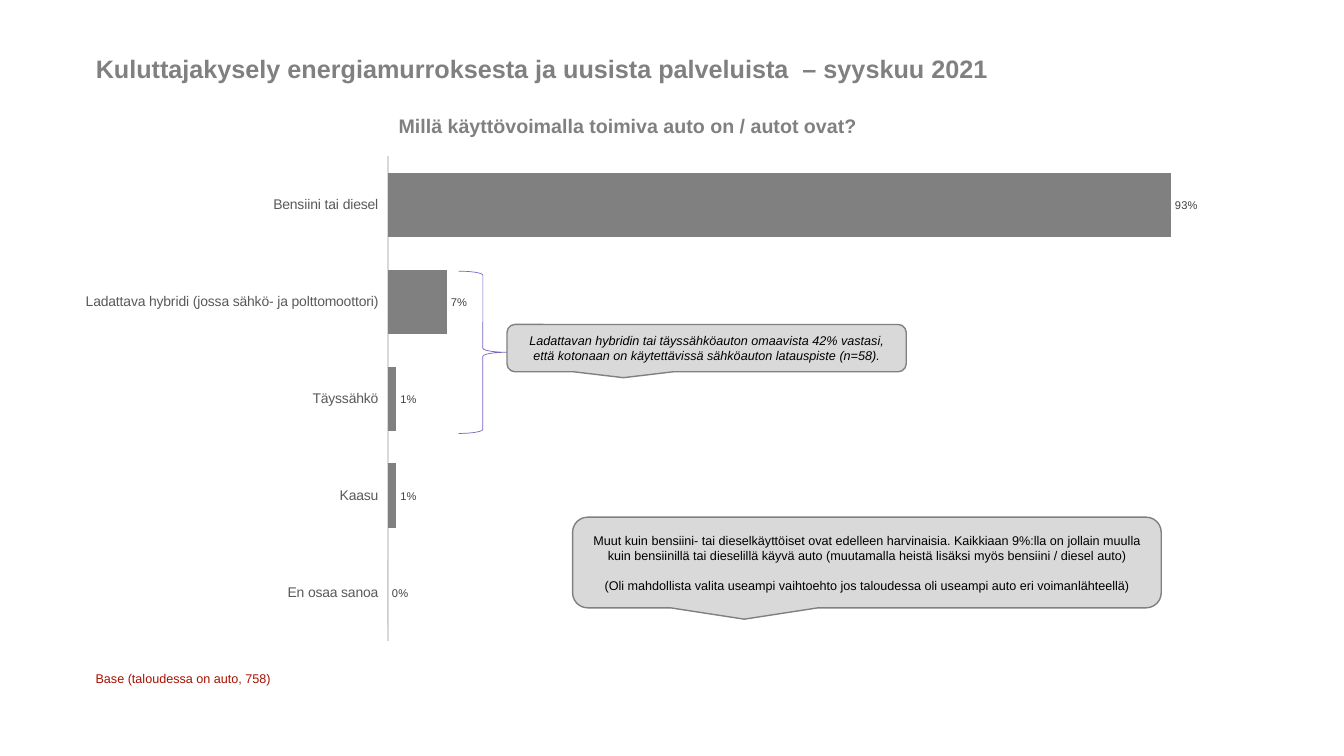
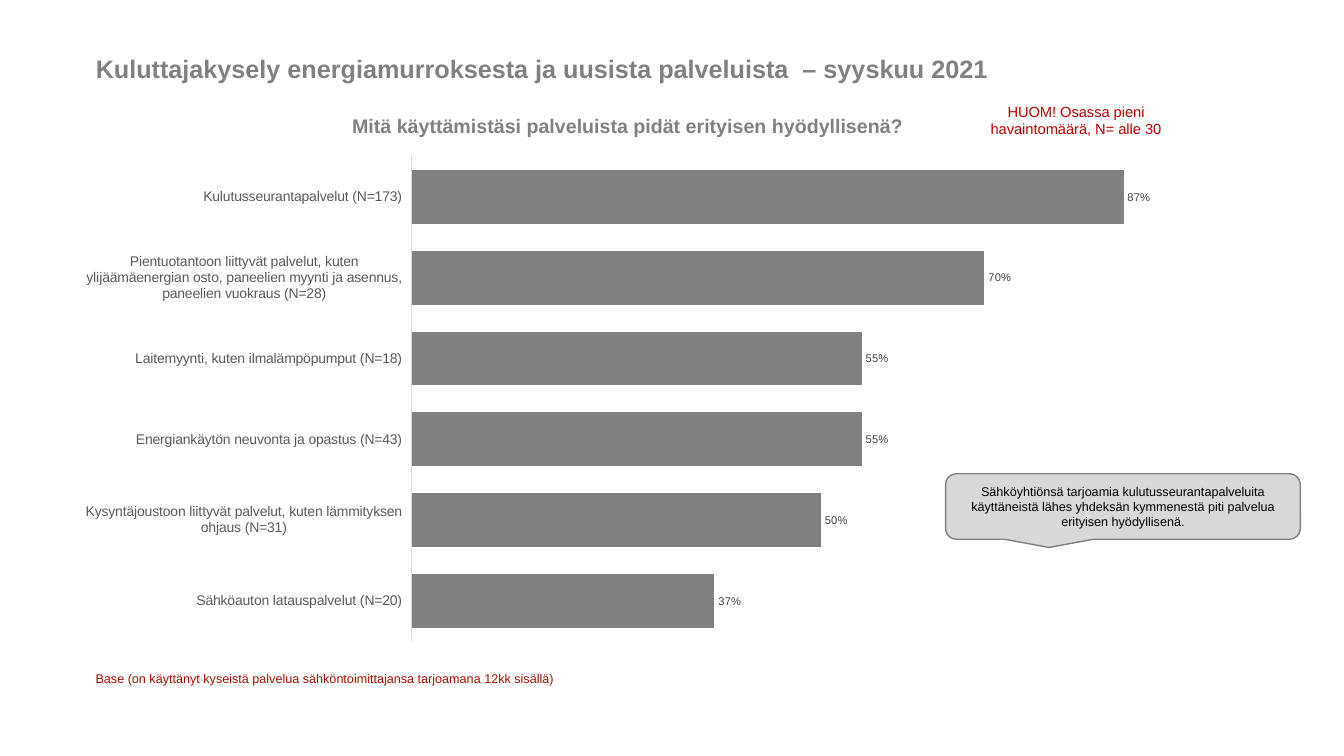
from lxml import etree
from pptx import Presentation
from pptx.chart.data import CategoryChartData
from pptx.dml.color import RGBColor
from pptx.enum.chart import XL_CHART_TYPE, XL_LABEL_POSITION, XL_TICK_LABEL_POSITION, XL_TICK_MARK
from pptx.enum.shapes import MSO_SHAPE
from pptx.enum.text import MSO_ANCHOR, MSO_AUTO_SIZE, PP_ALIGN
from pptx.oxml.ns import qn
from pptx.util import Pt

BAR_CLUSTERED = XL_CHART_TYPE.BAR_CLUSTERED
OUTSIDE_END = XL_LABEL_POSITION.OUTSIDE_END
LABELS_LOW = XL_TICK_LABEL_POSITION.LOW
NO_TICK = XL_TICK_MARK.NONE
CALLOUT = MSO_SHAPE.ROUNDED_RECTANGULAR_CALLOUT
RIGHT_BRACE = MSO_SHAPE.RIGHT_BRACE
TOP, MIDDLE = MSO_ANCHOR.TOP, MSO_ANCHOR.MIDDLE
LEFT, CENTER = PP_ALIGN.LEFT, PP_ALIGN.CENTER
NO_AUTOFIT = MSO_AUTO_SIZE.NONE

FONT = "Arial"
GRAY = RGBColor(0x80, 0x80, 0x80)
LIGHT_GRAY = RGBColor(0xD9, 0xD9, 0xD9)
LABEL_GRAY = RGBColor(0x59, 0x59, 0x59)
VALUE_GRAY = RGBColor(0x40, 0x40, 0x40)
BLACK = RGBColor(0, 0, 0)
BASE_RED = RGBColor(0xA8, 0x11, 0x00)
NOTE_RED = RGBColor(0xC0, 0x00, 0x00)
PURPLE = RGBColor(0x7C, 0x64, 0xC3)

TITLE = "Kuluttajakysely energiamurroksesta ja uusista palveluista  – syyskuu 2021"
TITLE_BOX = (61.2, 34.5, 837.4, 28.8)
QUESTION_BOX = (61.2, 77.8, 774.7, 24.5)
CHART_BOX = (61.2, 106.6, 837.4, 370)
BASE_BOX = (61.2, 476, 837.4, 20)


def style_font(font, size, color, bold=False, italic=False):
    font.name = FONT
    font.size = Pt(size)
    font.color.rgb = color
    font.bold = bold
    font.italic = italic


def place(shape, box):
    shape.left, shape.top, shape.width, shape.height = (Pt(value) for value in box)


def write(shape, text, size, color, align=LEFT, anchor=TOP, bold=False, italic=False, gap=0):
    frame = shape.text_frame
    frame.text = text
    frame.word_wrap = True
    frame.auto_size = NO_AUTOFIT
    frame.vertical_anchor = anchor
    for index, paragraph in enumerate(frame.paragraphs):
        paragraph.alignment = align
        if index:
            paragraph.space_before = Pt(gap)
        for run in paragraph.runs:
            style_font(run.font, size, color, bold, italic)


def add_text(slide, box, text, size, color, **options):
    shape = slide.shapes.add_textbox(*(Pt(value) for value in box))
    write(shape, text, size, color, **options)


def add_callout(slide, box, text, italic=False):
    shape = slide.shapes.add_shape(CALLOUT, *(Pt(value) for value in box))
    shape.shadow.inherit = False
    shape.fill.solid()
    shape.fill.fore_color.rgb = LIGHT_GRAY
    shape.line.color.rgb = GRAY
    shape.line.width = Pt(1)
    write(shape, text, 9, BLACK, align=CENTER, anchor=MIDDLE, italic=italic, gap=10.5)


def add_brace(slide, box):
    shape = slide.shapes.add_shape(RIGHT_BRACE, *(Pt(value) for value in box))
    shape.shadow.inherit = False
    shape.fill.background()
    shape.line.color.rgb = PURPLE
    shape.line.width = Pt(0.5)


def set_plot_layout(chart, plot):
    plot_area = chart._chartSpace.find(".//" + qn("c:plotArea"))
    for old_layout in plot_area.findall(qn("c:layout")):
        plot_area.remove(old_layout)
    layout = etree.Element(qn("c:layout"))
    manual = etree.SubElement(layout, qn("c:manualLayout"))
    settings = [("layoutTarget", "inner"), ("xMode", "edge"), ("yMode", "edge")]
    settings += zip("xywh", plot)
    for name, value in settings:
        etree.SubElement(manual, qn("c:" + name)).set("val", str(value))
    plot_area.insert(0, layout)


def add_bar_chart(slide, box, answers, plot_left, plot_width):
    data = CategoryChartData(number_format="0%")
    data.categories = list(answers)
    data.add_series("Series 1", list(answers.values()))
    frame = slide.shapes.add_chart(BAR_CLUSTERED, *(Pt(value) for value in box), data)
    chart = frame.chart
    chart.has_title = False
    chart.has_legend = False
    style_font(chart.font, 10, BLACK)
    set_plot_layout(chart, (plot_left, 0.014, plot_width, 0.936))

    category_axis = chart.category_axis
    category_axis.reverse_order = True
    category_axis.major_tick_mark = NO_TICK
    category_axis.minor_tick_mark = NO_TICK
    category_axis.tick_label_position = LABELS_LOW
    category_axis.format.line.color.rgb = LIGHT_GRAY
    category_axis.format.line.width = Pt(0.75)
    style_font(category_axis.tick_labels.font, 10, LABEL_GRAY)

    value_axis = chart.value_axis
    value_axis.minimum_scale = 0
    value_axis.maximum_scale = 1
    value_axis.major_unit = 0.2
    value_axis.has_major_gridlines = False
    value_axis.visible = False

    bars = chart.plots[0]
    bars.gap_width = 50
    bars.vary_by_categories = False
    series = bars.series[0]
    series.format.fill.solid()
    series.format.fill.fore_color.rgb = GRAY
    labels = series.data_labels
    labels.show_value = True
    labels.position = OUTSIDE_END
    labels.number_format = "0%"
    labels.number_format_is_linked = False
    style_font(labels.font, 8, VALUE_GRAY)


def add_survey_slide(presentation, question, base, answers, plot_left, plot_width):
    slide = presentation.slides.add_slide(presentation.slide_layouts[5])
    title = slide.shapes.title
    place(title, TITLE_BOX)
    write(title, TITLE, 18, GRAY, bold=True)
    add_text(slide, QUESTION_BOX, question, 14, GRAY, align=CENTER, anchor=MIDDLE, bold=True)
    add_text(slide, BASE_BOX, base, 9, BASE_RED)
    add_bar_chart(slide, CHART_BOX, answers, plot_left, plot_width)
    return slide


def add_power_source_slide(presentation):
    answers = {
        "Bensiini tai diesel": 0.93,
        "Ladattava hybridi (jossa sähkö- ja polttomoottori)": 0.07,
        "Täyssähkö": 0.01,
        "Kaasu": 0.01,
        "En osaa sanoa": 0,
    }
    slide = add_survey_slide(
        presentation,
        "Millä käyttövoimalla toimiva auto on / autot ovat?",
        "Base (taloudessa on auto, 758)",
        answers, 0.253, 0.723,
    )
    add_callout(
        slide, (409, 369.4, 420.5, 64.8),
        "Muut kuin bensiini- tai dieselkäyttöiset ovat edelleen harvinaisia. "
        "Kaikkiaan 9%:lla on jollain muulla kuin bensiinillä tai dieselillä käyvä auto "
        "(muutamalla heistä lisäksi myös bensiini / diesel auto)\n"
        "(Oli mahdollista valita useampi vaihtoehto jos taloudessa oli useampi auto "
        "eri voimanlähteellä)",
    )
    add_brace(slide, (327.6, 193.7, 34.6, 115.9))
    add_callout(
        slide, (362.2, 231.8, 285.1, 33.8),
        "Ladattavan hybridin tai täyssähköauton omaavista 42% vastasi, "
        "että kotonaan on käytettävissä sähköauton latauspiste (n=58).",
        italic=True,
    )


def add_service_slide(presentation):
    answers = {
        "Kulutusseurantapalvelut (N=173)": 0.87,
        "Pientuotantoon liittyvät palvelut, kuten ylijäämäenergian osto, "
        "paneelien myynti ja asennus, paneelien vuokraus (N=28)": 0.7,
        "Laitemyynti, kuten ilmalämpöpumput (N=18)": 0.55,
        "Energiankäytön neuvonta ja opastus (N=43)": 0.55,
        "Kysyntäjoustoon liittyvät palvelut, kuten lämmityksen ohjaus (N=31)": 0.5,
        "Sähköauton latauspalvelut (N=20)": 0.37,
    }
    slide = add_survey_slide(
        presentation,
        "Mitä käyttämistäsi palveluista pidät erityisen hyödyllisenä?",
        "Base (on käyttänyt kyseistä palvelua sähköntoimittajansa tarjoamana 12kk sisällä)",
        answers, 0.276, 0.7,
    )
    add_callout(
        slide, (675.4, 338.4, 253.4, 46.8),
        "Sähköyhtiönsä tarjoamia kulutusseurantapalveluita käyttäneistä lähes yhdeksän "
        "kymmenestä piti palvelua erityisen hyödyllisenä.",
    )
    add_text(
        slide, (675.4, 69.8, 186.5, 32.4),
        "HUOM! Osassa pieni havaintomäärä, N= alle 30", 10.5, NOTE_RED, align=CENTER,
    )


def main():
    presentation = Presentation()
    presentation.slide_width = Pt(960)
    presentation.slide_height = Pt(540)
    add_power_source_slide(presentation)
    add_service_slide(presentation)
    presentation.save("out.pptx")


if __name__ == "__main__":
    main()
